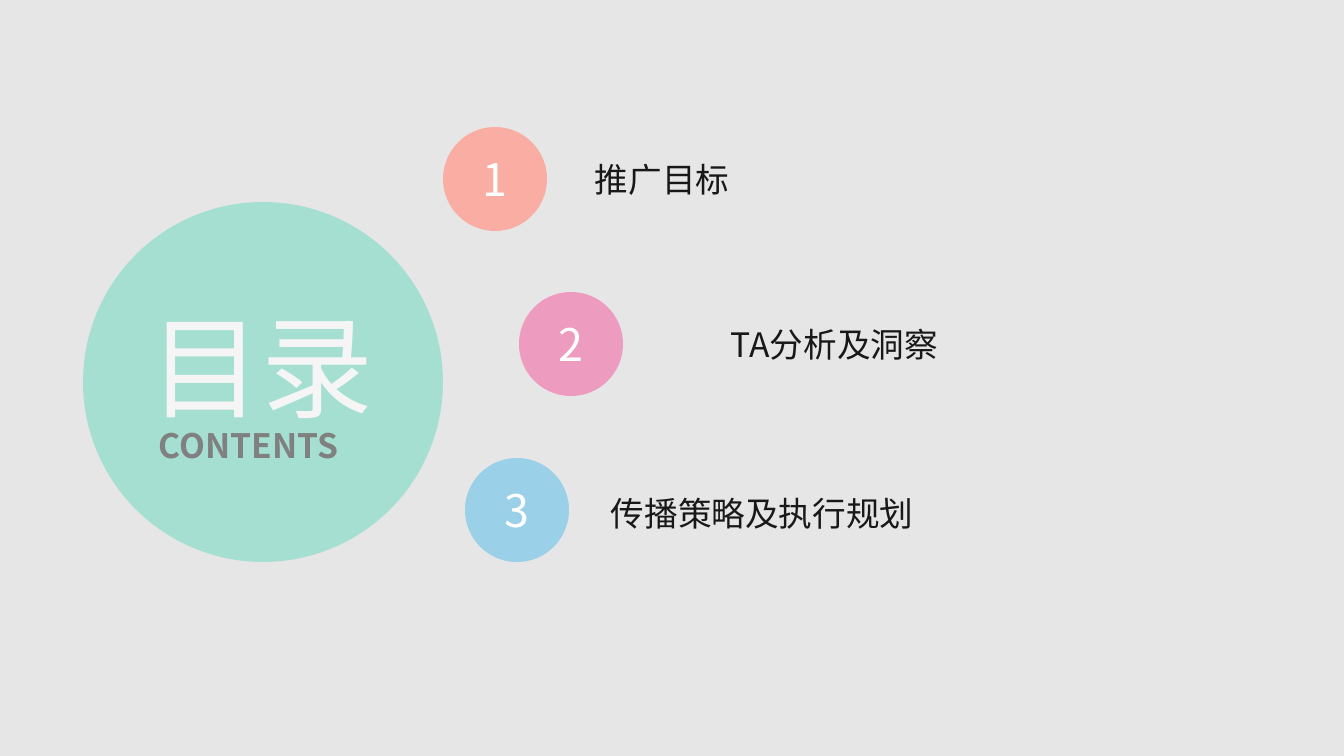
import pptx
import pptx.dml.color
import pptx.enum.shapes
import pptx.enum.text
import pptx.oxml
import pptx.oxml.ns
import pptx.util

PIXEL = 914400 / 100.8
FONT = "Noto Sans CJK SC"
COLORS = {
    "background": "E6E6E6",
    "mint": "A4DFD1",
    "coral": "FAAEA3",
    "pink": "ED9BBF",
    "blue": "9AD0E8",
    "title": "F5F5F5",
    "subtitle": "808080",
    "text": "181818",
    "white": "FFFFFF",
}
ALIGN = pptx.enum.text.PP_ALIGN
ANCHOR = pptx.enum.text.MSO_ANCHOR
BADGE_SIZE = 104
LABEL_WIDTH, LABEL_HEIGHT = 482, 50
# Badge box left and top, label offset from the badge, colour, wording
ENTRIES = [
    (443, 127, 142, 27, "coral", "推广目标"),
    (519, 292, 202, 27, "pink", "TA分析及洞察"),
    (465, 458, 136, 30, "blue", "传播策略及执行规划"),
]


def px(*lengths):
    return [pptx.util.Emu(round(length * PIXEL)) for length in lengths]


def rgb(name):
    return pptx.dml.color.RGBColor.from_string(COLORS[name])


def write_text(shape, text, size, color, align, anchor=ANCHOR.TOP, bold=False):
    frame = shape.text_frame
    frame.word_wrap = True
    frame.auto_size = pptx.enum.text.MSO_AUTO_SIZE.NONE
    frame.vertical_anchor = anchor
    frame.text = text
    paragraph = frame.paragraphs[0]
    paragraph.alignment = align
    font = paragraph.font
    font.size = pptx.util.Pt(size)
    font.bold = bold
    font.color.rgb = rgb(color)
    font.name = FONT
    defaults = paragraph._p.pPr.find(pptx.oxml.ns.qn("a:defRPr"))
    defaults.append(pptx.oxml.parse_xml(
        f'<a:ea {pptx.oxml.ns.nsdecls("a")} typeface="{FONT}"/>'))


def add_circle(slide, left, top, size, color):
    circle = slide.shapes.add_shape(
        pptx.enum.shapes.MSO_SHAPE.OVAL, *px(left, top, size, size))
    circle.shadow.inherit = False
    circle.fill.solid()
    circle.fill.fore_color.rgb = rgb(color)
    circle.line.fill.background()
    return circle


def add_heading(slide, left, top, size):
    add_circle(slide, left, top, size, "mint")
    subtitle = slide.shapes.add_textbox(*px(left + 66, top + 218, 226, 50))
    write_text(subtitle, "CONTENTS", 24, "subtitle", ALIGN.JUSTIFY, bold=True)

    title = slide.shapes.title
    title.left, title.top, title.width, title.height = px(
        left + 56, top + 90, 247, 146)
    write_text(title, "目录", 80, "title", ALIGN.JUSTIFY)
    # Bring the title in front of its circle
    slide.shapes._spTree.append(title._element)


def add_entry(slide, number, left, top, label_x, label_y, color, text):
    badge = add_circle(slide, left, top, BADGE_SIZE, color)
    write_text(badge, str(number), 32, "white", ALIGN.CENTER, ANCHOR.MIDDLE)
    label = slide.shapes.add_textbox(
        *px(left + label_x, top + label_y, LABEL_WIDTH, LABEL_HEIGHT))
    write_text(label, text, 24, "text", ALIGN.LEFT)


def add_contents_slide(presentation):
    slide = presentation.slides.add_slide(presentation.slide_layouts[5])
    slide.background.fill.solid()
    slide.background.fill.fore_color.rgb = rgb("background")
    add_heading(slide, 83, 202, 360)
    for number, entry in enumerate(ENTRIES, start=1):
        add_entry(slide, number, *entry)


def main():
    presentation = pptx.Presentation()
    presentation.slide_width, presentation.slide_height = px(1344, 756)
    add_contents_slide(presentation)
    presentation.save("out.pptx")


if __name__ == "__main__":
    main()
